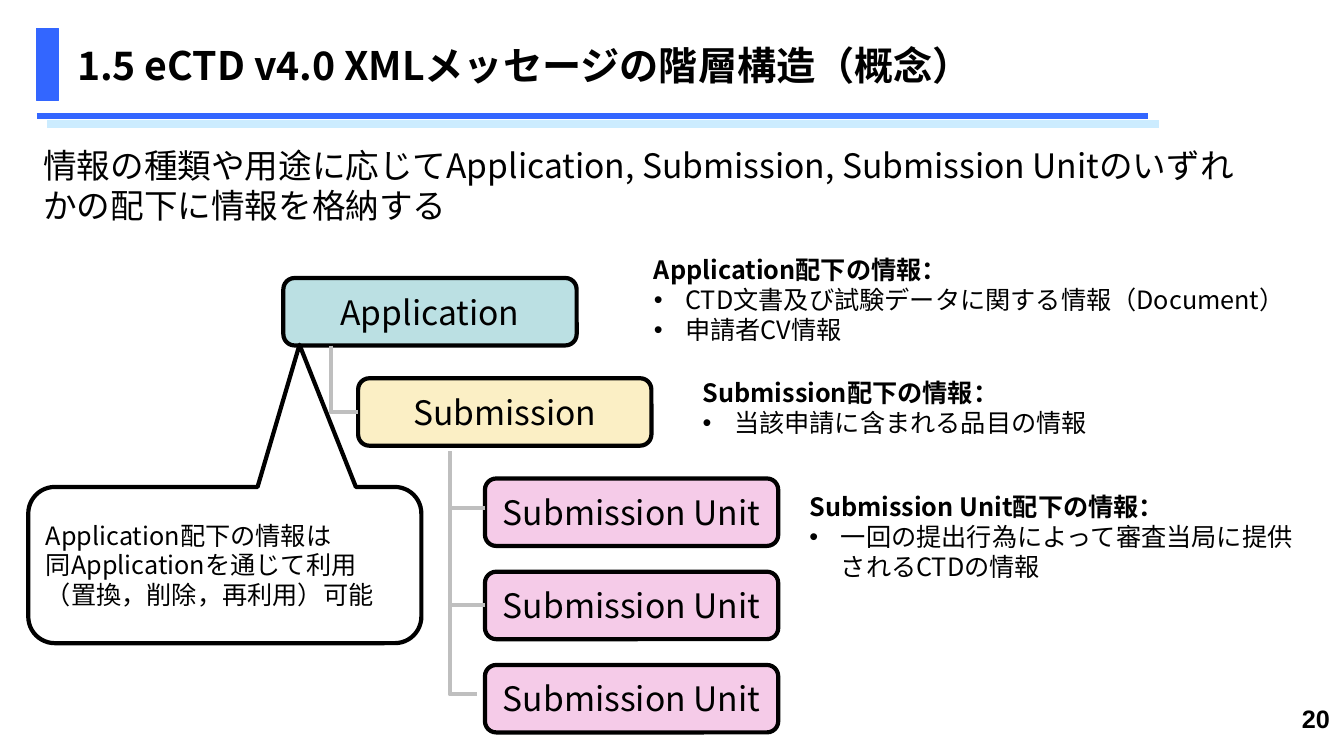
from pptx import Presentation
from pptx.dml.color import RGBColor
from pptx.enum.shapes import MSO_CONNECTOR, MSO_SHAPE
from pptx.enum.text import MSO_ANCHOR, PP_ALIGN
from pptx.oxml.ns import qn
from pptx.util import Pt
from lxml.etree import SubElement

BLACK = RGBColor(0x00, 0x00, 0x00)
BLUE = RGBColor(0x33, 0x66, 0xFF)
PALE_BLUE = RGBColor(0xCC, 0xEC, 0xFF)
GREY = RGBColor(0xBF, 0xBF, 0xBF)
TEAL = RGBColor(0xBB, 0xE0, 0xE3)
CREAM = RGBColor(0xFB, 0xEF, 0xC5)
PINK = RGBColor(0xF5, 0xCB, 0xE8)
FONT = "Noto Sans CJK JP"
LINE_RATIO = 1.19
NODE_WIDTH, NODE_HEIGHT = 209.5, 48.2


def style_para(para, size, bold=False, align=PP_ALIGN.LEFT, font=FONT):
    para.alignment = align
    para.line_spacing = Pt(round(size * LINE_RATIO, 1))
    for span in para.runs:
        span.font.size = Pt(size)
        span.font.bold = bold
        span.font.name = font
        span.font.color.rgb = BLACK
        SubElement(span.font._element, qn("a:ea")).set("typeface", font)


def add_bullet(para, indent=22.5):
    props = para._p.get_or_add_pPr()
    props.set("marL", str(Pt(indent)))
    props.set("indent", str(-Pt(indent)))
    SubElement(props, qn("a:buFont")).set("typeface", "Arial")
    SubElement(props, qn("a:buChar")).set("char", "•")


def add_text(page, left, top, width, height, text, size, anchor=MSO_ANCHOR.TOP, **style):
    box = page.shapes.add_textbox(Pt(left), Pt(top), Pt(width), Pt(height))
    frame = box.text_frame
    frame.word_wrap = True
    frame.vertical_anchor = anchor
    frame.text = text
    for para in frame.paragraphs:
        style_para(para, size, **style)
    return frame


def add_line(page, start, end, colour, width):
    points = [Pt(value) for value in (*start, *end)]
    line = page.shapes.add_connector(MSO_CONNECTOR.STRAIGHT, *points)
    line.line.color.rgb = colour
    line.line.width = Pt(width)
    SubElement(line._element.spPr, qn("a:effectLst"))


def add_elbow(page, *points):
    """Open grey path through the given corner points."""
    corners = [(Pt(x), Pt(y)) for x, y in points]
    builder = page.shapes.build_freeform(*corners[0])
    builder.add_line_segments(corners[1:], close=False)
    elbow = builder.convert_to_shape()
    elbow.fill.background()
    elbow.line.color.rgb = GREY
    elbow.line.width = Pt(3)
    elbow.shadow.inherit = False


def add_outlined(page, preset, left, top, width, height, text, size, align, fill=None):
    shape = page.shapes.add_shape(preset, Pt(left), Pt(top), Pt(width), Pt(height))
    shape.shadow.inherit = False
    if fill is None:
        shape.fill.background()
    else:
        shape.fill.solid()
        shape.fill.fore_color.rgb = fill
    shape.line.color.rgb = BLACK
    shape.line.width = Pt(3)
    frame = shape.text_frame
    frame.vertical_anchor = MSO_ANCHOR.MIDDLE
    frame.word_wrap = fill is None
    frame.text = text
    for para in frame.paragraphs:
        style_para(para, size, align=align)
    return shape


def add_header(page, left, top, title):
    # Blue marker and double rule
    marker = page.shapes.add_shape(MSO_SHAPE.RECTANGLE, Pt(left), Pt(top), Pt(15.5), Pt(51.5))
    marker.shadow.inherit = False
    marker.fill.solid()
    marker.fill.fore_color.rgb = BLUE
    marker.line.color.rgb = BLUE
    marker.line.width = Pt(0.75)
    add_line(page, (left, top + 62.6), (left + 793.5, top + 62.6), BLUE, 4.5)
    add_line(page, (left + 7.5, top + 68.4), (left + 801.5, top + 68.4), PALE_BLUE, 6)
    # Title
    add_text(page, left + 21.6, top - 5, 864, 62.6, title, 28, MSO_ANCHOR.MIDDLE, bold=True)


def add_tree(page, left, top):
    # Nodes: application, submission and three units
    nodes = [(0, 0, "Application", TEAL), (53.4, 71.6, "Submission", CREAM)]
    unit_left, unit_top, unit_step = 144, 143.2, 66.6
    nodes += [(unit_left, unit_top + i * unit_step, "Submission Unit", PINK) for i in range(3)]
    for x, y, name, fill in nodes:
        add_outlined(page, MSO_SHAPE.ROUNDED_RECTANGLE, left + x, top + y,
                     NODE_WIDTH, NODE_HEIGHT, name, 24, PP_ALIGN.CENTER, fill)
    # Links between the levels
    stem, trunk = left + 33.8, left + 118.8
    add_elbow(page, (stem, top + 48.2), (stem, top + 95.8), (left + 53.4, top + 95.8))
    add_elbow(page, (trunk, top + 123.8), (trunk, top + 297.4), (left + 138.2, top + 297.4))
    for y in (164.2, 233.3):
        add_line(page, (left + unit_left, top + y), (trunk, top + y), GREY, 3)


def add_info(page, left, top, width, height, heading, items):
    frame = add_text(page, left, top, width, height, "\n".join([heading, *items]), 18)
    first, *rest = frame.paragraphs
    for span in first.runs:
        span.font.bold = True
    for para in rest:
        add_bullet(para)


def add_callout(page, left, top, width, height, text):
    callout = add_outlined(page, MSO_SHAPE.ROUNDED_RECTANGULAR_CALLOUT, left, top,
                           width, height, text, 18, PP_ALIGN.LEFT)
    for index, value in enumerate((-0.19, -1.41, 0.17)):
        callout.adjustments[index] = abs(value) if index == 0 else value


def main():
    deck = Presentation()
    deck.slide_width, deck.slide_height = Pt(960), Pt(540)
    page = deck.slides.add_slide(deck.slide_layouts[6])

    add_header(page, 26.4, 20.2, "1.5 eCTD v4.0 XMLメッセージの階層構造（概念）")
    add_text(page, 23.8, 100, 880.6, 70,
             "情報の種類や用途に応じてApplication, Submission, Submission Unitの"
             "いずれかの配下に情報を格納する", 24)
    add_tree(page, 202.4, 198.6)

    # Explanations beside each level
    add_info(page, 460, 178.6, 475.2, 94, "Application配下の情報：",
             ["CTD文書及び試験データに関する情報（Document）", "申請者CV情報"])
    add_info(page, 494.8, 266.4, 454.3, 51, "Submission配下の情報：",
             ["当該申請に含まれる品目の情報"])
    add_info(page, 571, 347.8, 365.8, 72.7, "Submission Unit配下の情報：",
             ["一回の提出行為によって審査当局に提供されるCTDの情報"])

    add_callout(page, 20.2, 347.8, 280.8, 111.6,
                "Application配下の情報は\v同Applicationを通じて利用（置換，削除，再利用）可能")

    # Page number
    add_text(page, 864.7, 499, 92.2, 37.4, "20", 18,
             bold=True, align=PP_ALIGN.RIGHT, font="Arial")
    deck.save("out.pptx")


if __name__ == "__main__":
    main()
